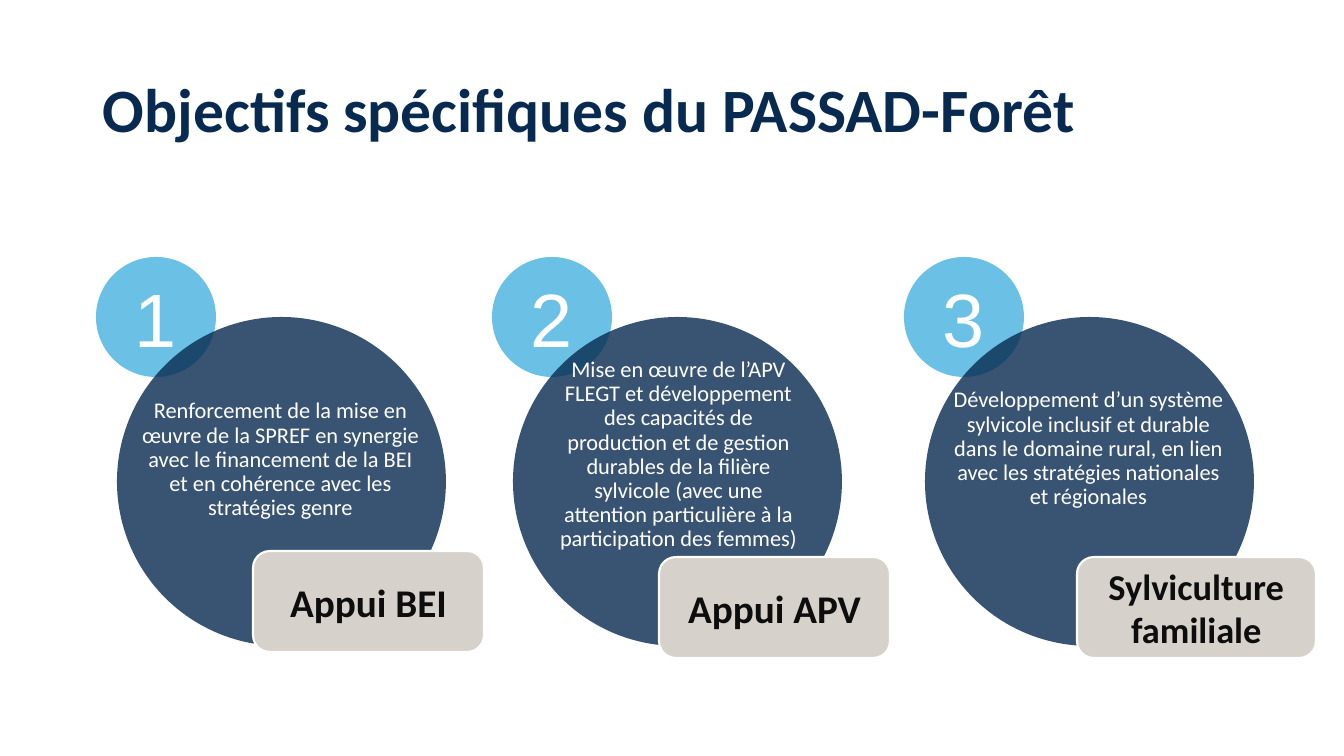
from lxml import etree
from pptx import Presentation
from pptx.dml.color import RGBColor
from pptx.enum.shapes import MSO_SHAPE
from pptx.enum.text import MSO_ANCHOR, MSO_AUTO_SIZE, PP_ALIGN
from pptx.oxml.ns import qn
from pptx.util import Pt

OVAL = MSO_SHAPE.OVAL
ROUND = MSO_SHAPE.ROUNDED_RECTANGLE
MIDDLE = MSO_ANCHOR.MIDDLE
FIXED = MSO_AUTO_SIZE.NONE
LEFT, CENTER = PP_ALIGN.LEFT, PP_ALIGN.CENTER

TITLE = "Objectifs spécifiques du PASSAD-Forêt"
GOALS = [
    {
        "left": 96,
        "text": "Renforcement de la mise en œuvre de la SPREF en synergie avec le "
                "financement de la BEI et en cohérence avec les stratégies genre",
        "body": (128, 340, 305, 240),
        "tag": "Appui BEI", "box": (253, 551, 231, 101), "size": 28,
    },
    {
        "left": 492,
        "text": "Mise en œuvre de l’APV FLEGT et développement des capacités de "
                "production et de gestion durables de la filière sylvicole (avec une "
                "attention particulière à la participation des femmes)",
        "body": (545, 335, 267, 240),
        "tag": "Appui APV", "box": (659, 557, 231, 101), "size": 28,
    },
    {
        "left": 904,
        "text": "Développement d’un système sylvicole inclusif et durable dans le "
                "domaine rural, en lien avec les stratégies nationales et régionales",
        "body": (936, 329, 305, 240),
        "tag": "Sylviculture familiale", "box": (1077, 557, 239, 101), "size": 26,
    },
]
NAVY, SKY, SAND, INK, WHITE = "082A50", "6AC0E5", "D7D1CB", "0D0D0D", "FFFFFF"
SMALL, LARGE = 120, 329
TOP, SHIFT, DROP = 257, 21, 60
HEAD = {"name": "Calibri", "size": Pt(44), "bold": True}
DIGIT = {"name": "Arial", "size": Pt(54), "bold": False}
BODY = {"name": "Calibri", "size": Pt(16), "bold": False}
LABEL = {"name": "Calibri", "bold": True}


def px(num):
    return round(num * 914400 / 100.8)


def color(code):
    return RGBColor.from_string(code)


def apply(item, form):
    for key, value in form.items():
        setattr(item, key, value)


def write(shape, text, form, code, align=CENTER, space=1.0, inset=10):
    frame = shape.text_frame
    apply(frame, {
        "word_wrap": True, "auto_size": FIXED, "vertical_anchor": MIDDLE,
        "margin_left": px(inset), "margin_right": px(inset),
        "margin_top": px(inset / 2), "margin_bottom": px(inset / 2),
    })
    frame.text = text
    para = frame.paragraphs[0]
    apply(para, {"alignment": align, "line_spacing": space})
    font = para.runs[0].font
    apply(font, form)
    font.color.rgb = color(code)


def draw(slide, kind, box, code, edge=None, alpha=None):
    shape = slide.shapes.add_shape(kind, *map(px, box))
    shape.shadow.inherit = False
    shape.fill.solid()
    shape.fill.fore_color.rgb = color(code)
    if alpha:
        tint = shape.fill._xPr.find(qn("a:solidFill"))[0]
        etree.SubElement(tint, qn("a:alpha")).set("val", str(alpha * 1000))
    if edge:
        shape.line.color.rgb = color(edge)
        shape.line.width = Pt(1.5)
    else:
        shape.line.fill.background()
    return shape


def main():
    deck = Presentation()
    deck.slide_width, deck.slide_height = px(1344), px(756)
    slide = deck.slides.add_slide(deck.slide_layouts[5])
    title = slide.shapes.title
    apply(title, dict(zip(("left", "top", "width", "height"),
                          map(px, (93, 40, 1159, 146)))))
    write(title, TITLE, HEAD, NAVY, LEFT, 0.9)

    for num, goal in enumerate(GOALS, 1):
        left = goal["left"]
        disc = draw(slide, OVAL, (left, TOP, SMALL, SMALL), SKY)
        write(disc, str(num), DIGIT, WHITE, inset=0)
        draw(slide, OVAL, (left + SHIFT, TOP + DROP, LARGE, LARGE), NAVY, alpha=80)
        body = slide.shapes.add_textbox(*map(px, goal["body"]))
        write(body, goal["text"], BODY, WHITE, space=0.9)
        tag = draw(slide, ROUND, goal["box"], SAND, WHITE)
        write(tag, goal["tag"], LABEL | {"size": Pt(goal["size"])}, INK)

    deck.save("out.pptx")


if __name__ == "__main__":
    main()
